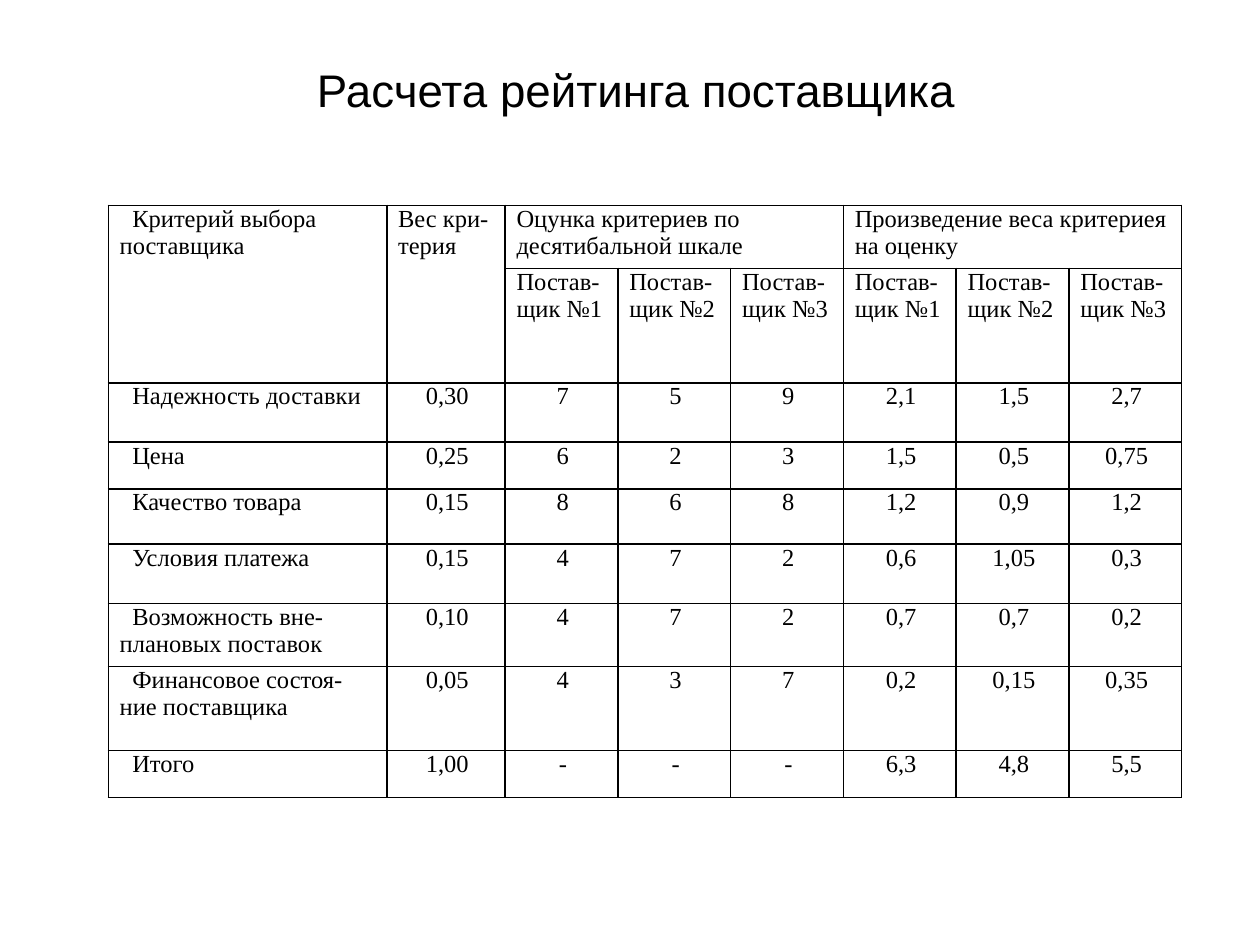
from lxml.etree import SubElement
from pptx import Presentation
from pptx.dml.color import RGBColor
from pptx.enum.text import MSO_ANCHOR, PP_ALIGN
from pptx.oxml.ns import qn
from pptx.util import Inches, Pt

BLACK = RGBColor(0x00, 0x00, 0x00)


def style_paragraph(paragraph, font_name, size, align):
    paragraph.alignment = align
    for run in paragraph.runs:
        run.font.name = font_name
        run.font.size = Pt(size)
        run.font.color.rgb = BLACK


def add_borders(cell):
    properties = cell._tc.get_or_add_tcPr()
    for side in ("lnL", "lnR", "lnT", "lnB"):
        line = SubElement(properties, qn(f"a:{side}"), w=str(Pt(1)))
        fill = SubElement(line, qn("a:solidFill"))
        SubElement(fill, qn("a:srgbClr"), val=str(BLACK))


prs = Presentation()
prs.slide_width, prs.slide_height = Inches(10), Inches(7.5)
slide = prs.slides.add_slide(prs.slide_layouts[5])

# Title
title = slide.shapes.title
title.left, title.top = Inches(0.55), Inches(0.47)
title.width, title.height = Inches(9), Inches(0.94)
title.text_frame.text = "Расчета рейтинга поставщика"
title.text_frame.vertical_anchor = MSO_ANCHOR.TOP
title.text_frame.margin_top = Inches(0.02)
style_paragraph(title.text_frame.paragraphs[0], "Arial", 26.1, PP_ALIGN.CENTER)

# Table content: two header rows, then criteria with weights, scores and products
suppliers = [f"Постав-\nщик №{number}" for number in (1, 2, 3)]
rating_rows = [
    ["Критерий выбора поставщика", "Вес кри-\nтерия",
     "Оцунка критериев по десятибальной шкале", "", "",
     "Произведение веса критериея на оценку", "", ""],
    ["", "", *suppliers, *suppliers],
    ["Надежность доставки", "0,30", "7", "5", "9", "2,1", "1,5", "2,7"],
    ["Цена", "0,25", "6", "2", "3", "1,5", "0,5", "0,75"],
    ["Качество товара", "0,15", "8", "6", "8", "1,2", "0,9", "1,2"],
    ["Условия платежа", "0,15", "4", "7", "2", "0,6", "1,05", "0,3"],
    ["Возможность вне- плановых поставок", "0,10", "4", "7", "2", "0,7", "0,7", "0,2"],
    ["Финансовое состоя- ние поставщика", "0,05", "4", "3", "7", "0,2", "0,15", "0,35"],
    ["Итого", "1,00", "-", "-", "-", "6,3", "4,8", "5,5"],
]
HEADER_ROWS = 2
column_widths = [2.21, 0.94] + [0.895] * 6
row_heights = [0.5, 0.91, 0.47, 0.37, 0.44, 0.47, 0.5, 0.67, 0.37]

# Table grid
ratings = slide.shapes.add_table(
    len(row_heights), len(column_widths),
    Inches(0.86), Inches(1.63), Inches(8.52), Inches(4.7)).table
ratings.first_row = False
ratings.horz_banding = False
for column, width in zip(ratings.columns, column_widths):
    column.width = Inches(width)
for row, height in zip(ratings.rows, row_heights):
    row.height = Inches(height)

# Cells
for row_index, row_texts in enumerate(rating_rows):
    for column_index, text in enumerate(row_texts):
        cell = ratings.cell(row_index, column_index)
        cell.margin_left = cell.margin_right = Inches(0.07)
        cell.margin_top = cell.margin_bottom = 0
        add_borders(cell)
        cell.fill.background()
        cell.text_frame.text = text
        is_value = row_index >= HEADER_ROWS and column_index > 0
        first_line_indent = 0.1 if column_index == 0 else 0
        for paragraph in cell.text_frame.paragraphs:
            style_paragraph(paragraph, "Times New Roman", 14,
                            PP_ALIGN.CENTER if is_value else PP_ALIGN.LEFT)
            indents = paragraph._p.get_or_add_pPr()
            indents.set("marL", str(Inches(0.02)))
            indents.set("indent", str(Inches(first_line_indent)))

# Merged headers
for column_index in (0, 1):
    ratings.cell(0, column_index).merge(ratings.cell(1, column_index))
for column_index in (2, 5):
    ratings.cell(0, column_index).merge(ratings.cell(0, column_index + 2))

prs.save("out.pptx")
